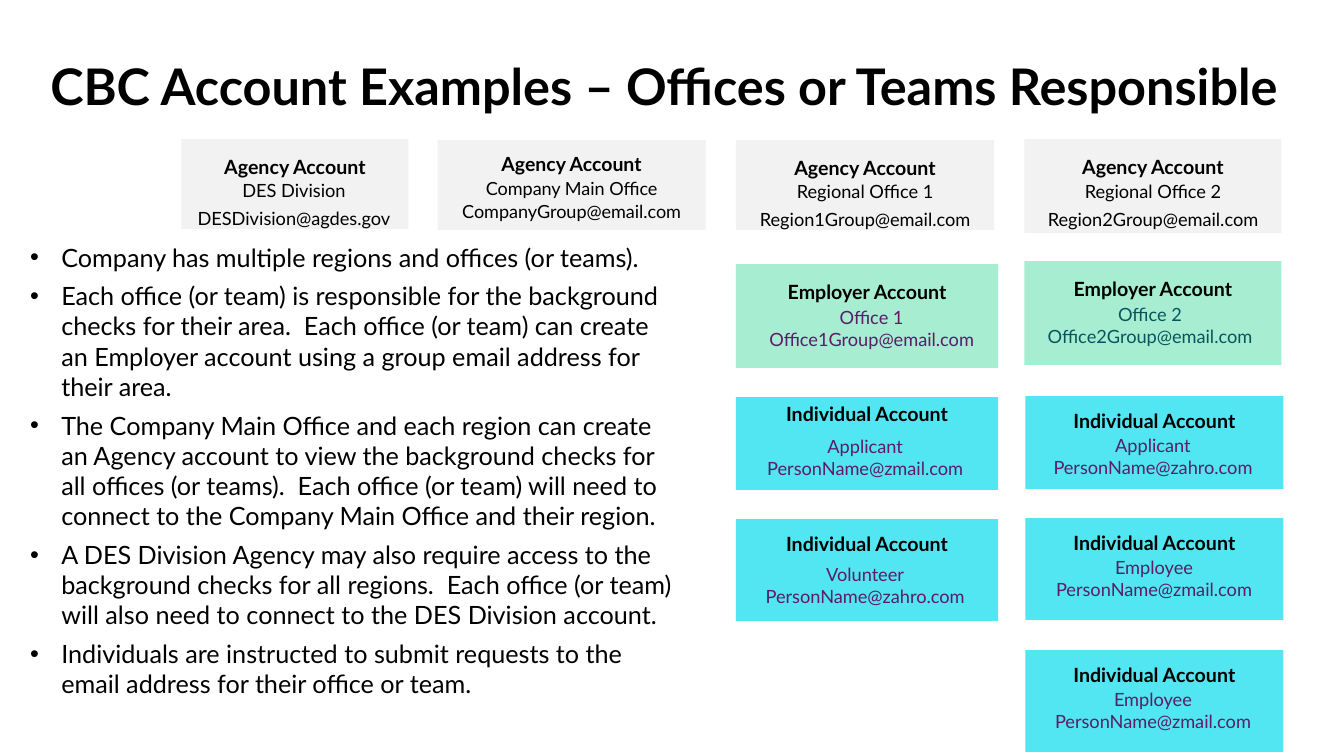
from pptx import Presentation
from pptx.dml.color import RGBColor
from pptx.enum.shapes import MSO_SHAPE
from pptx.enum.text import MSO_ANCHOR, MSO_AUTO_SIZE, PP_ALIGN
from pptx.oxml.xmlchemy import OxmlElement
from pptx.util import Inches, Pt

FONT = "Lato"
BLACK, PURPLE, TEAL = "000000", "5A1D66", "07555C"
GRAY, GREEN, CYAN = "F2F2F2", "A6EDD2", "51E6F2"

TITLE = "CBC Account Examples – Offices or Teams Responsible"
BULLETS = [
    "Company has multiple regions and offices (or teams).",
    "Each office (or team) is responsible for the background checks for their area.  "
    "Each office (or team) can create an Employer account using a group email address "
    "for their area.",
    "The Company Main Office and each region can create an Agency account to view the "
    "background checks for all offices (or teams).  Each office (or team) will need to "
    "connect to the Company Main Office and their region.",
    "A DES Division Agency may also require access to the background checks for all "
    "regions.  Each office (or team) will also need to connect to the DES Division account.",
    "Individuals are instructed to submit requests to the email address for their "
    "office or team.",
]

# Card box, heading inset, detail box, detail lines
AGENCIES = [
    ((1.8, 1.38, 2.25, 0.89), 0.18, (1.8, 1.77, 2.23, 0.34),
     ("DES Division", "DESDivision@agdes.gov")),
    ((7.3, 1.39, 2.56, 0.89), 0.18, (7.3, 1.78, 2.56, 0.34),
     ("Regional Office 1", "Region1Group@email.com")),
    ((10.16, 1.38, 2.55, 0.93), 0.18, (10.16, 1.78, 2.55, 0.34),
     ("Regional Office 2", "Region2Group@email.com")),
]
# The same, then detail top inset and detail colour
EMPLOYERS = [
    ((7.3, 2.62, 2.6, 1.03), 0.18, (7.43, 2.99, 2.43, 0.34),
     ("Office 1", "Office1Group@email.com"), 0.05, PURPLE),
    ((10.16, 2.59, 2.55, 1.03), 0.18, (10.25, 2.96, 2.31, 0.34),
     ("Office 2", "Office2Group@email.com"), 0.05, TEAL),
]
INDIVIDUALS = [
    ((7.3, 3.94, 2.6, 0.92), 0.07, (7.29, 4.27, 2.58, 0.32),
     ("Applicant", "PersonName@zmail.com"), 0.05, PURPLE),
    ((10.17, 3.93, 2.56, 0.92), 0.15, (10.16, 4.31, 2.55, 0.39),
     ("Applicant", "PersonName@zahro.com"), 0, PURPLE),
    ((7.3, 5.15, 2.6, 1.01), 0.15, (7.29, 5.54, 2.58, 0.32),
     ("Volunteer", "PersonName@zahro.com"), 0.05, PURPLE),
    ((10.17, 5.14, 2.56, 1.01), 0.15, (10.17, 5.52, 2.55, 0.39),
     ("Employee", "PersonName@zmail.com"), 0, PURPLE),
    ((10.17, 6.45, 2.56, 1.01), 0.15, (10.16, 6.83, 2.55, 0.39),
     ("Employee", "PersonName@zmail.com"), 0, PURPLE),
]


def rgb(value):
    return RGBColor.from_string(value)


def set_insets(frame, left, top, right, bottom):
    frame.word_wrap = True
    frame.margin_left, frame.margin_top = Inches(left), Inches(top)
    frame.margin_right, frame.margin_bottom = Inches(right), Inches(bottom)


def add_paragraph(frame, text, size, color=BLACK, bold=False,
                  align=PP_ALIGN.CENTER, spacing=1.0, before=0):
    """Fill the empty first paragraph, or append a new one."""
    paragraph = frame.paragraphs[0]
    if paragraph.runs:
        paragraph = frame.add_paragraph()
    paragraph.alignment = align
    paragraph.line_spacing = spacing
    paragraph.space_before = Pt(before)
    run = paragraph.add_run()
    run.text = text
    run.font.name = FONT
    run.font.size = Pt(size)
    run.font.bold = bold
    run.font.color.rgb = rgb(color)
    return paragraph


def add_text_frame(slide, box, insets):
    text_box = slide.shapes.add_textbox(*map(Inches, box))
    set_insets(text_box.text_frame, *insets)
    return text_box.text_frame


def add_card(slide, box, fill, heading, inset, size=14, spacing=0.9):
    shape = slide.shapes.add_shape(MSO_SHAPE.RECTANGLE, *map(Inches, box))
    shape.shadow.inherit = False
    shape.fill.solid()
    shape.fill.fore_color.rgb = rgb(fill)
    shape.line.fill.background()
    frame = shape.text_frame
    set_insets(frame, 0, inset, 0, 0.05)
    frame.vertical_anchor = MSO_ANCHOR.TOP
    add_paragraph(frame, heading, size, bold=True, spacing=spacing, before=10)
    return frame


def add_agency(slide, box, inset, detail_box, lines):
    add_card(slide, box, GRAY, "Agency Account", inset)
    frame = add_text_frame(slide, detail_box, (0, 0.05, 0, 0.05))
    for line, spacing in zip(lines, (0.8, 0.9)):
        add_paragraph(frame, line, 13, spacing=spacing, before=6)


def add_main_office(slide):
    frame = add_card(slide, (4.34, 1.39, 2.66, 0.89), GRAY, "Agency Account",
                     0.18, size=13.9, spacing=0.7)
    for line in ("Company Main Office", "CompanyGroup@email.com"):
        add_paragraph(frame, line, 12.9, spacing=0.7, before=6)


def add_account(slide, fill, heading, box, inset, detail_box, lines, detail_inset, color):
    add_card(slide, box, fill, heading, inset)
    frame = add_text_frame(slide, detail_box, (0, detail_inset, 0, 0.05))
    for line in lines:
        add_paragraph(frame, line, 13, color)


def add_title(slide):
    frame = add_text_frame(slide, (0.4, 0.43, 12.58, 0.73), (0.1, 0.05, 0.1, 0))
    frame.vertical_anchor = MSO_ANCHOR.BOTTOM
    add_paragraph(frame, TITLE, 36, bold=True, align=PP_ALIGN.LEFT, spacing=0.9)


def add_bullet_list(slide):
    frame = add_text_frame(slide, (0.2, 2.35, 6.63, 4.98), (0.1, 0.05, 0.1, 0.05))
    frame.auto_size = MSO_AUTO_SIZE.SHAPE_TO_FIT_TEXT
    for text in BULLETS:
        paragraph = add_paragraph(frame, text, 18, align=PP_ALIGN.LEFT, before=6)
        properties = paragraph._p.get_or_add_pPr()
        properties.set("marL", str(Inches(0.31)))
        properties.set("indent", str(-Inches(0.31)))
        font = OxmlElement("a:buFont")
        font.set("typeface", "Arial")
        bullet = OxmlElement("a:buChar")
        bullet.set("char", "•")
        properties.extend([font, bullet])


def main():
    presentation = Presentation()
    presentation.slide_width = Inches(13.33)
    presentation.slide_height = Inches(7.5)
    slide = presentation.slides.add_slide(presentation.slide_layouts[6])
    add_title(slide)
    for agency in AGENCIES:
        add_agency(slide, *agency)
    add_main_office(slide)
    add_bullet_list(slide)
    for employer in EMPLOYERS:
        add_account(slide, GREEN, "Employer Account", *employer)
    for individual in INDIVIDUALS:
        add_account(slide, CYAN, "Individual Account", *individual)
    presentation.save("out.pptx")


if __name__ == "__main__":
    main()
